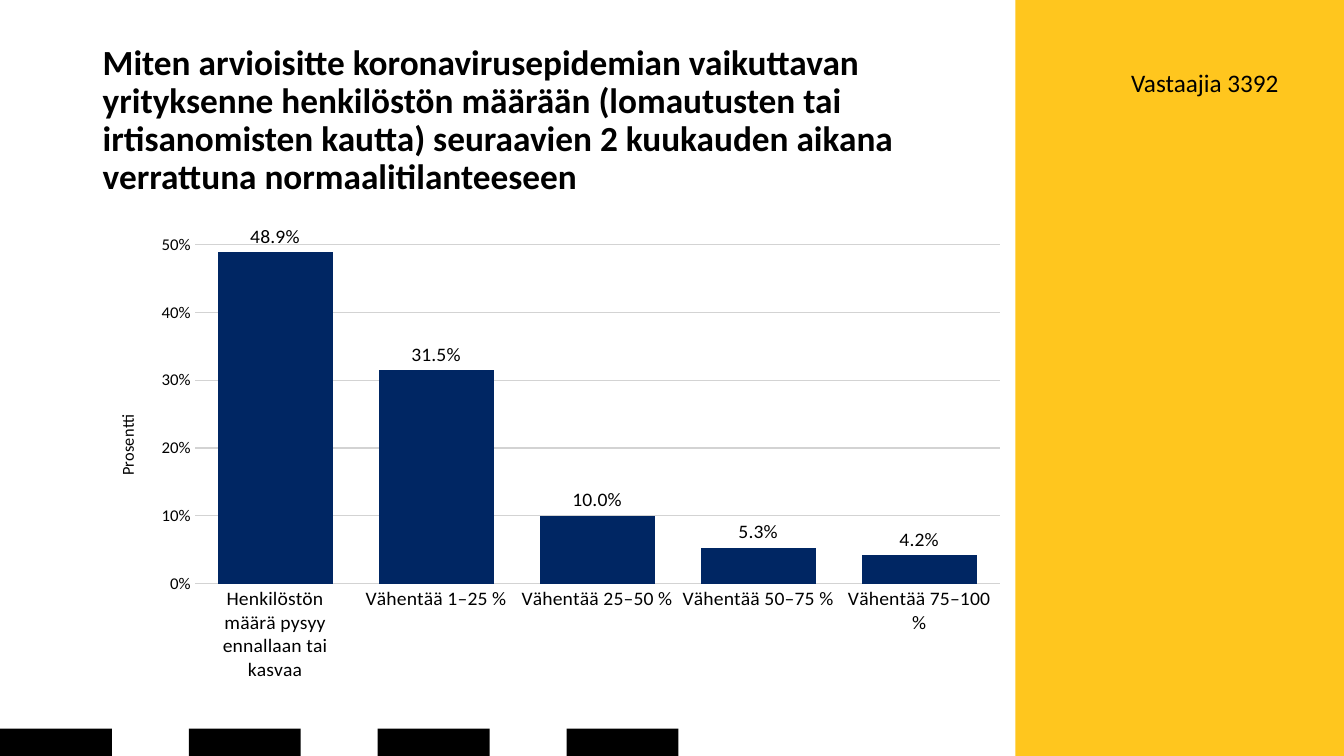
import pptx
import pptx.chart.data
import pptx.dml.color
import pptx.enum.chart
import pptx.enum.shapes
import pptx.enum.text
import pptx.oxml
import pptx.oxml.ns
import pptx.util

Inches = pptx.util.Inches
Pt = pptx.util.Pt
FONT = "Calibri"
BLACK, GOLD, NAVY, GRAY, WHITE = "000000", "FFC61E", "002663", "D3D3D3", "FFFFFF"


def color(code):
    return pptx.dml.color.RGBColor.from_string(code)


def style(font, size, bold=False):
    font.name = FONT
    font.size = Pt(size)
    font.bold = bold
    font.color.rgb = color(BLACK)


def write(frame, text, size, bold=False, align="LEFT", anchor="TOP", space=1.0):
    frame.word_wrap = True
    frame.vertical_anchor = getattr(pptx.enum.text.MSO_ANCHOR, anchor)
    line = frame.paragraphs[0]
    line.alignment = getattr(pptx.enum.text.PP_ALIGN, align)
    line.line_spacing = space
    run = line.add_run()
    run.text = text
    style(run.font, size, bold)


def place(chart, x, y, w, h):
    """Fix the inner plot area, in fractions of the chart frame."""
    plot = chart._chartSpace.chart.plotArea
    for old in plot.findall(pptx.oxml.ns.qn("c:layout")):
        plot.remove(old)
    sizes = "".join(f'<c:{tag} val="{val}"/>'
                    for tag, val in zip("xywh", (x, y, w, h)))
    plot.insert(0, pptx.oxml.parse_xml(
        f'<c:layout {pptx.oxml.ns.nsdecls("c")}><c:manualLayout>'
        '<c:layoutTarget val="inner"/><c:xMode val="edge"/><c:yMode val="edge"/>'
        f'{sizes}</c:manualLayout></c:layout>'
        .replace('<c:x ', '<c:x ')))


def fill_plot(chart, code):
    plot = chart._chartSpace.chart.plotArea
    plot.append(pptx.oxml.parse_xml(
        f'<c:spPr {pptx.oxml.ns.nsdecls("c", "a")}><a:solidFill>'
        f'<a:srgbClr val="{code}"/></a:solidFill></c:spPr>'))


class Page:
    """Holds the deck and its current slide."""

    def __init__(self):
        self.deck = pptx.Presentation()
        self.deck.slide_width = Inches(13.33)
        self.deck.slide_height = Inches(7.5)
        self.slide = self.deck.slides.add_slide(self.deck.slide_layouts[6])

    def block(self, x, y, w, h, fill):
        shape = self.slide.shapes.add_shape(
            pptx.enum.shapes.MSO_SHAPE.RECTANGLE,
            Inches(x), Inches(y), Inches(w), Inches(h))
        shape.shadow.inherit = False
        shape.fill.solid()
        shape.fill.fore_color.rgb = color(fill)
        shape.line.fill.background()

    def text(self, x, y, w, h, words, **form):
        box = self.slide.shapes.add_textbox(
            Inches(x), Inches(y), Inches(w), Inches(h))
        write(box.text_frame, words, **form)

    def bars(self, x, y, w, h, cats, vals):
        kinds = pptx.enum.chart
        data = pptx.chart.data.CategoryChartData()
        data.categories = cats
        data.add_series("Series 1", vals)
        chart = self.slide.shapes.add_chart(
            kinds.XL_CHART_TYPE.COLUMN_CLUSTERED,
            Inches(x), Inches(y), Inches(w), Inches(h), data).chart
        chart.has_legend = False
        chart.has_title = False
        style(chart.font, 11)

        plot = chart.plots[0]
        plot.gap_width = 40
        plot.vary_by_categories = False
        fill = plot.series[0].format.fill
        fill.solid()
        fill.fore_color.rgb = color(NAVY)
        plot.has_data_labels = True
        tags = plot.data_labels
        tags.show_value = True
        tags.position = kinds.XL_LABEL_POSITION.OUTSIDE_END
        tags.number_format = "0.0%"
        tags.number_format_is_linked = False
        style(tags.font, 14)

        for axis, size in ((chart.category_axis, 14), (chart.value_axis, 12)):
            axis.major_tick_mark = kinds.XL_TICK_MARK.INSIDE
            axis.format.line.fill.background()
            style(axis.tick_labels.font, size)

        axis = chart.value_axis
        axis.minimum_scale, axis.maximum_scale = 0, 0.55
        axis.major_unit = 0.1
        axis.tick_labels.number_format = "0%"
        axis.tick_labels.number_format_is_linked = False
        axis.has_major_gridlines = True
        grid = axis.major_gridlines.format.line
        grid.width = Pt(1)
        grid.color.rgb = color(GRAY)
        axis.has_title = True
        title = axis.axis_title.text_frame
        title.text = "Prosentti"
        style(title.paragraphs[0].runs[0].font, 12)

        place(chart, 0.11, 0.02, 0.87, 0.8)
        fill_plot(chart, WHITE)


def main():
    page = Page()
    page.block(10.07, 0, 3.26, 7.5, GOLD)
    for i in range(4):
        page.block(i * 1.873, 7.23, 1.11, 0.27, BLACK)
    page.text(0.92, 0.4, 9.18, 1.6,
              "Miten arvioisitte koronavirusepidemian vaikuttavan yrityksenne "
              "henkilöstön määrään (lomautusten tai irtisanomisten kautta) "
              "seuraavien 2 kuukauden aikana verrattuna normaalitilanteeseen",
              size=25.2, bold=True, anchor="MIDDLE", space=0.9)
    page.text(10.71, 0.62, 2.07, 0.4, "Vastaajia 3392", size=18, align="RIGHT")
    spans = ("1–25", "25–50", "50–75", "75–100")
    page.bars(0.92, 2, 9.18, 4.76,
              ["Henkilöstön määrä pysyy ennallaan tai kasvaa"]
              + [f"Vähentää {span} %" for span in spans],
              (0.489, 0.315, 0.1, 0.053, 0.042))
    page.deck.save("out.pptx")


if __name__ == "__main__":
    main()
